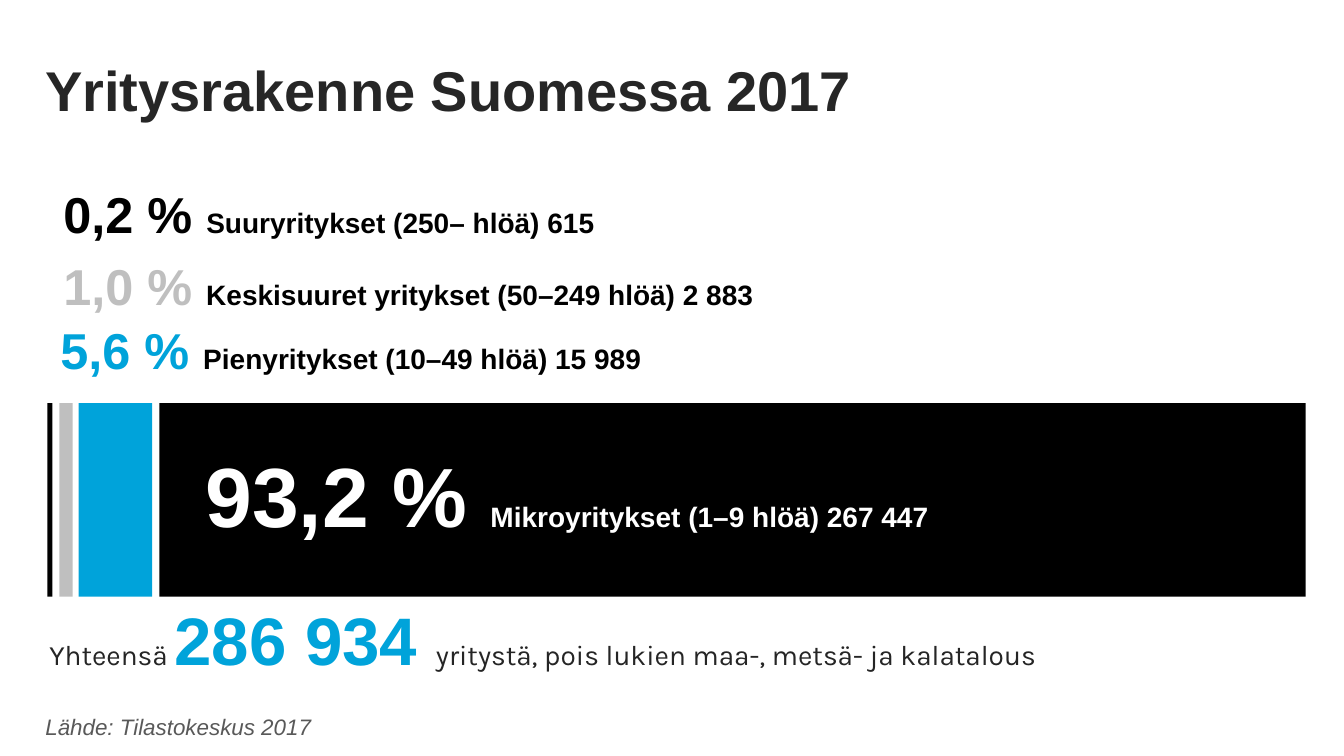
from pptx import Presentation
from pptx.dml.color import RGBColor
from pptx.enum.shapes import MSO_SHAPE
from pptx.enum.text import MSO_ANCHOR, MSO_AUTO_SIZE
from pptx.util import Inches, Pt

RECTANGLE = MSO_SHAPE.RECTANGLE
TOP, BOTTOM = MSO_ANCHOR.TOP, MSO_ANCHOR.BOTTOM
GROW = MSO_AUTO_SIZE.SHAPE_TO_FIT_TEXT

BLACK, WHITE, GREY, BLUE = "000000", "FFFFFF", "BFBFBF", "00A3DA"
DARK, TITLE_COLOR, SOURCE_COLOR = "252525", "262626", "595959"
BAR_TOP, BAR_HEIGHT = 4, 1.92


def color(value):
    return RGBColor.from_string(value)


def add_run(paragraph, text, size, fill, font="Arial", bold=False, italic=False):
    run = paragraph.add_run()
    run.text = text
    run.font.name = font
    run.font.size = Pt(size)
    run.font.bold = bold
    run.font.italic = italic
    run.font.color.rgb = color(fill)


def add_text_box(slide, left, top, width, height, wrap=False):
    """Add a box that grows with its text; return its frame."""
    box = slide.shapes.add_textbox(
        Inches(left), Inches(top), Inches(width), Inches(height))
    frame = box.text_frame
    frame.word_wrap = wrap
    frame.auto_size = GROW
    return frame


def add_plain_text(slide, left, top, width, height, anchor):
    """Add a fixed box without margins; return its paragraph."""
    frame = add_text_box(slide, left, top, width, height, wrap=True)
    frame.auto_size = MSO_AUTO_SIZE.NONE
    frame.vertical_anchor = anchor
    frame.margin_left = frame.margin_right = 0
    frame.margin_top = frame.margin_bottom = 0
    return frame.paragraphs[0]


def add_share_label(frame, share, share_size, share_color, label, label_color):
    paragraph = frame.paragraphs[0]
    add_run(paragraph, share + " ", share_size, share_color, bold=True)
    add_run(paragraph, label, 20, label_color, bold=True)


def add_bar_segment(slide, left, width, fill):
    segment = slide.shapes.add_shape(
        RECTANGLE, Inches(left), Inches(BAR_TOP), Inches(width), Inches(BAR_HEIGHT))
    segment.shadow.inherit = False
    segment.fill.solid()
    segment.fill.fore_color.rgb = color(fill)
    segment.line.fill.background()


def add_total(slide):
    paragraph = add_text_box(slide, 0.39, 5.89, 9.99, 0.91).paragraphs[0]
    add_run(paragraph, "Yhteensä", 20, DARK, font="Karla")
    add_run(paragraph, " ", 18.7, DARK, font="Karla")
    add_run(paragraph, "286 934 ", 48, BLUE, bold=True)
    add_run(paragraph, "yritystä, pois lukien maa-, metsä- ja kalatalous",
            20, DARK, font="Karla")


def main():
    presentation = Presentation()
    presentation.slide_width = Inches(13.33)
    presentation.slide_height = Inches(7.5)
    slide = presentation.slides.add_slide(presentation.slide_layouts[6])

    title = add_plain_text(slide, 0.45, 0, 12.3, 1.22, BOTTOM)
    add_run(title, "Yritysrakenne Suomessa 2017", 40, TITLE_COLOR, bold=True)

    for left, width, fill in [
        (0.47, 0.05, BLACK),
        (0.59, 0.13, GREY),
        (0.78, 0.73, BLUE),
        (1.58, 11.37, BLACK),
    ]:
        add_bar_segment(slide, left, width, fill)

    for left, top, width, share, fill, label in [
        (0.53, 1.77, 5.51, "0,2 %", BLACK, "Suuryritykset (250– hlöä) 615"),
        (0.53, 2.48, 7.1, "1,0 %", GREY, "Keskisuuret yritykset (50–249 hlöä) 2 883"),
        (0.5, 3.12, 6.01, "5,6 %", BLUE, "Pienyritykset (10–49 hlöä) 15 989"),
    ]:
        frame = add_text_box(slide, left, top, width, 0.71)
        add_share_label(frame, share, 36, fill, label, BLACK)

    frame = add_text_box(slide, 1.94, 4.35, 10.48, 1.11, wrap=True)
    add_share_label(frame, "93,2 %", 60, WHITE,
                    "Mikroyritykset (1–9 hlöä) 267 447", WHITE)

    add_total(slide)
    source = add_plain_text(slide, 0.45, 7.07, 10.62, 0.43, TOP)
    add_run(source, "Lähde: Tilastokeskus 2017", 16, SOURCE_COLOR, italic=True)

    presentation.save("out.pptx")


if __name__ == "__main__":
    main()
